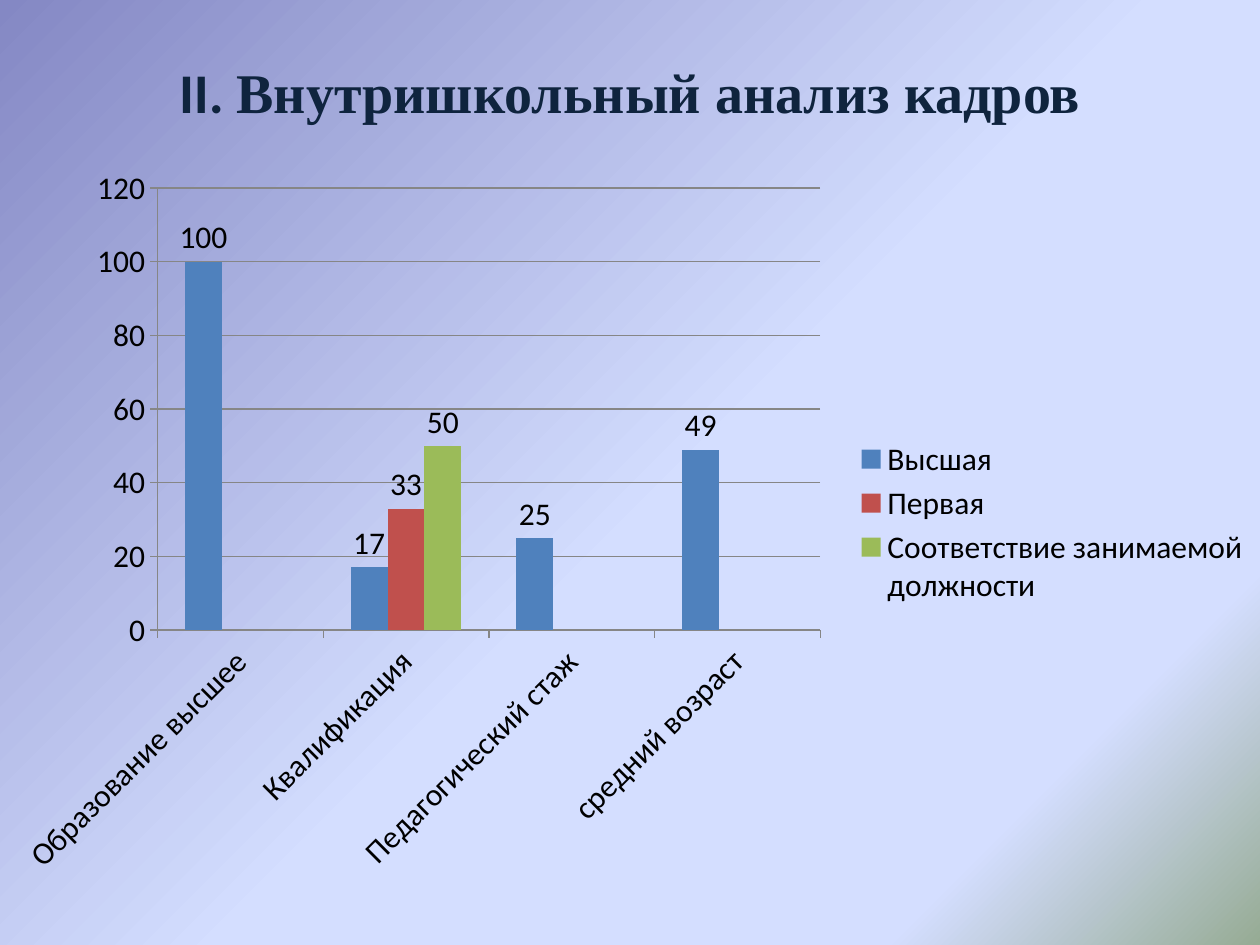
"""Build the staff analysis slide: a gradient ground, a title and a column chart."""
from lxml import etree
from pptx import Presentation
from pptx.chart.data import CategoryChartData
from pptx.dml.color import RGBColor
from pptx.enum.chart import XL_CHART_TYPE, XL_LABEL_POSITION, XL_LEGEND_POSITION, XL_TICK_MARK
from pptx.enum.text import MSO_ANCHOR, PP_ALIGN
from pptx.oxml.ns import qn
from pptx.util import Inches, Pt

COLUMNS = XL_CHART_TYPE.COLUMN_CLUSTERED
ABOVE = XL_LABEL_POSITION.OUTSIDE_END
RIGHT = XL_LEGEND_POSITION.RIGHT
OUTSIDE = XL_TICK_MARK.OUTSIDE
MIDDLE = MSO_ANCHOR.MIDDLE
CENTER = PP_ALIGN.CENTER

NAVY = RGBColor(0x0F, 0x24, 0x3E)
BLACK = RGBColor(0, 0, 0)
GRAY = RGBColor(0x86, 0x86, 0x86)
BLUE = RGBColor(0x4F, 0x81, 0xBD)
RED = RGBColor(0xC0, 0x50, 0x4D)
GREEN = RGBColor(0x9B, 0xBB, 0x59)

STOPS = [(0, "8488C4"), (53, "D4DEFF"), (83, "D4DEFF"), (100, "96AB94")]
TITLE = [("II. ", "Calibri"), ("Внутришкольный анализ кадров", "Times New Roman")]
GROUPS = ["Образование высшее", "Квалификация", "Педагогический стаж", "средний возраст"]
SERIES = [
    ("Высшая", [100, 17, 25, 49], BLUE),
    ("Первая", [None, 33, None, None], RED),
    ("Соответствие занимаемой должности", [None, 50, None, None], GREEN),
]
WIDE, HIGH = 10, 7.5
PLOT = {"x": 0.125, "y": 0.045, "w": 0.526, "h": 0.602}
LEGEND = {"x": 0.675, "y": 0.38, "w": 0.32, "h": 0.24}


def paint(slide):
    fill = slide.background.fill
    fill.gradient()
    fill.gradient_angle = 315
    stops = next(slide.element.iter(qn("a:gsLst")))
    for old in list(stops):
        stops.remove(old)
    for place, tone in STOPS:
        stop = etree.SubElement(stops, qn("a:gs"), pos=str(place * 1000))
        etree.SubElement(stop, qn("a:srgbClr"), val=tone)


def add_title(slide):
    box = slide.shapes.add_textbox(
        Inches(WIDE * 0.05), Inches(HIGH * 0.04), Inches(WIDE * 0.9), Inches(0.85))
    frame = box.text_frame
    frame.word_wrap = True
    frame.vertical_anchor = MIDDLE
    line = frame.paragraphs[0]
    line.alignment = CENTER
    for text, face in TITLE:
        run = line.add_run()
        run.text = text
        font = run.font
        font.name, font.size, font.bold = face, Pt(32), True
        font.color.rgb = NAVY


def place(part, index, area, inner=False):
    for old in part.findall(qn("c:layout")):
        part.remove(old)
    layout = etree.Element(qn("c:layout"))
    part.insert(index, layout)
    manual = etree.SubElement(layout, qn("c:manualLayout"))
    if inner:
        etree.SubElement(manual, qn("c:layoutTarget"), val="inner")
    for key in "xy":
        etree.SubElement(manual, qn(f"c:{key}Mode"), val="edge")
    for key, share in area.items():
        etree.SubElement(manual, qn(f"c:{key}"), val=str(share))


def add_graph(slide):
    data = CategoryChartData()
    data.categories = GROUPS
    for name, values, tone in SERIES:
        data.add_series(name, values)
    chart = slide.shapes.add_chart(
        COLUMNS, 0, Inches(1.23), Inches(WIDE), Inches(5.83), data).chart
    chart.has_title = False
    chart.font.name, chart.font.size = "Calibri", Pt(18)
    chart.font.color.rgb = BLACK

    plot = chart.plots[0]
    plot.vary_by_categories = False
    plot.gap_width, plot.overlap = 150, 0
    for series, (name, values, tone) in zip(plot.series, SERIES):
        series.format.fill.solid()
        series.format.fill.fore_color.rgb = tone
        if None in values:
            series.data_labels.show_value = True
            series.data_labels.position = ABOVE
        else:
            for index in range(len(values)):
                series.points[index].data_label.position = ABOVE

    across, up = chart.category_axis, chart.value_axis
    for axis in (across, up):
        axis.major_tick_mark = OUTSIDE
        axis.format.line.color.rgb = GRAY
    across.tick_labels.font.size = Pt(18)
    next(across.tick_labels.font._element.iterancestors(qn("c:txPr"))).find(
        qn("a:bodyPr")).set("rot", "-2700000")
    up.minimum_scale, up.maximum_scale, up.major_unit = 0, 120, 20
    up.has_major_gridlines = True
    up.major_gridlines.format.line.color.rgb = GRAY

    chart.has_legend = True
    chart.legend.position = RIGHT
    chart.legend.include_in_layout = False
    root = chart.element
    place(next(root.iter(qn("c:plotArea"))), 0, PLOT, True)
    place(next(root.iter(qn("c:legend"))), 1, LEGEND)


def main():
    deck = Presentation()
    deck.slide_width, deck.slide_height = Inches(WIDE), Inches(HIGH)
    slide = deck.slides.add_slide(deck.slide_layouts[6])
    paint(slide)
    add_title(slide)
    add_graph(slide)
    deck.save("out.pptx")


if __name__ == "__main__":
    main()
